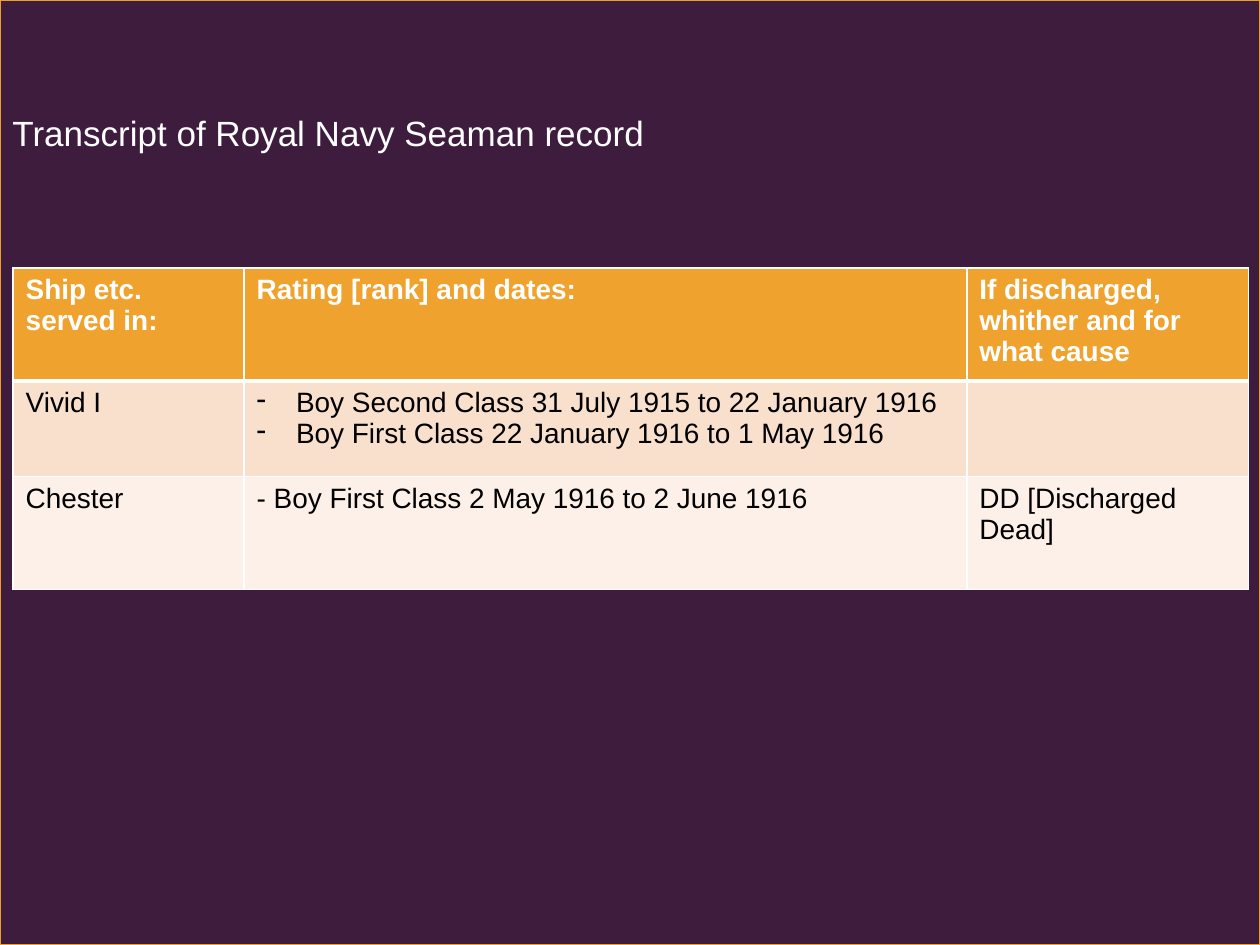
from pptx import Presentation
from pptx.dml.color import RGBColor
from pptx.enum.shapes import MSO_SHAPE
from pptx.enum.text import MSO_ANCHOR
from pptx.oxml import parse_xml
from pptx.oxml.ns import nsdecls
from pptx.util import Pt

WHITE = RGBColor(0xFF, 0xFF, 0xFF)
BLACK = RGBColor(0x00, 0x00, 0x00)
PLUM = RGBColor(0x3D, 0x1C, 0x3D)
GOLD = RGBColor(0xEF, 0x9F, 0x28)
AMBER = RGBColor(0xF0, 0xA2, 0x2E)
PEACH = RGBColor(0xF9, 0xE0, 0xCD)
CREAM = RGBColor(0xFC, 0xF0, 0xE8)

WIDTH, HEIGHT = 720, 540
COLS = [132, 413, 161]
ROWS = [64.5, 54.5, 64.5]
FILLS = [AMBER, PEACH, CREAM]
RECORD = [
    ["Ship etc. served in:", "Rating [rank] and dates:",
     "If discharged, whither and for what cause"],
    ["Vivid I",
     ["Boy Second Class 31 July 1915 to 22 January 1916",
      "Boy First Class 22 January 1916 to 1 May 1916"], ""],
    ["Chester", "- Boy First Class 2 May 1916 to 2 June 1916",
     "DD [Discharged Dead]"],
]


class Page:
    def __init__(self, slide, face="Arial"):
        self.slide = slide
        self.face = face

    def style(self, para, size, color, bold=False):
        font = para.font
        font.name, font.size, font.bold = self.face, Pt(size), bold
        font.color.rgb = color

    def panel(self, left, top, width, height, fill, line):
        box = self.slide.shapes.add_shape(
            MSO_SHAPE.RECTANGLE, Pt(left), Pt(top), Pt(width), Pt(height))
        box.shadow.inherit = False
        box.fill.solid()
        box.fill.fore_color.rgb = fill
        box.line.color.rgb = line
        box.line.width = Pt(0.75)

    def title(self, text, left, top, width, height):
        box = self.slide.shapes.add_textbox(
            Pt(left), Pt(top), Pt(width), Pt(height))
        frame = box.text_frame
        frame.word_wrap = True
        frame.vertical_anchor = MSO_ANCHOR.TOP
        frame.margin_top = Pt(24.5)
        frame.text = text
        self.style(frame.paragraphs[0], 20, WHITE)

    def table(self, data, left, top, cols, rows, fills):
        grid = self.slide.shapes.add_table(
            len(rows), len(cols), Pt(left), Pt(top),
            Pt(sum(cols)), Pt(sum(rows))).table
        for col, width in zip(grid.columns, cols):
            col.width = Pt(width)
        for row, height in zip(grid.rows, rows):
            row.height = Pt(height)
        for r, line in enumerate(data):
            for c, text in enumerate(line):
                self.cell(grid.cell(r, c), text, fills[r], r)

    def cell(self, cell, text, fill, row):
        """Fill one cell; a list of texts becomes dashed items."""
        listed = isinstance(text, list)
        cell.text = "\n".join(text) if listed else text
        for para in cell.text_frame.paragraphs:
            self.style(para, 16, BLACK if row else WHITE, row == 0)
            if listed:
                self.dash(para)
        self.edge(cell, "L", 1)
        self.edge(cell, "R", 1)
        self.edge(cell, "T", 3 if row == 1 else 1)
        self.edge(cell, "B", 1 if row else 3)
        cell.fill.solid()
        cell.fill.fore_color.rgb = fill

    def dash(self, para):
        props = para._p.get_or_add_pPr()
        props.set("marL", str(Pt(22.5)))
        props.set("indent", str(-Pt(22.5)))
        props.insert_element_before(
            parse_xml(f'<a:buChar {nsdecls("a")} char="-"/>'),
            "a:tabLst", "a:defRPr", "a:extLst")

    def edge(self, cell, side, width):
        cell._tc.get_or_add_tcPr().append(parse_xml(
            f'<a:ln{side} {nsdecls("a")} w="{Pt(width)}"><a:solidFill>'
            f'<a:srgbClr val="{WHITE}"/></a:solidFill></a:ln{side}>'))


def main():
    deck = Presentation()
    deck.slide_width, deck.slide_height = Pt(WIDTH), Pt(HEIGHT)
    page = Page(deck.slides.add_slide(deck.slide_layouts[6]))
    page.panel(0, 0, WIDTH, HEIGHT, PLUM, GOLD)
    page.title("Transcript of Royal Navy Seaman record", 0, 39, 378, 98)
    page.table(RECORD, 7.5, 153, COLS, ROWS, FILLS)
    deck.save("out.pptx")


if __name__ == "__main__":
    main()
